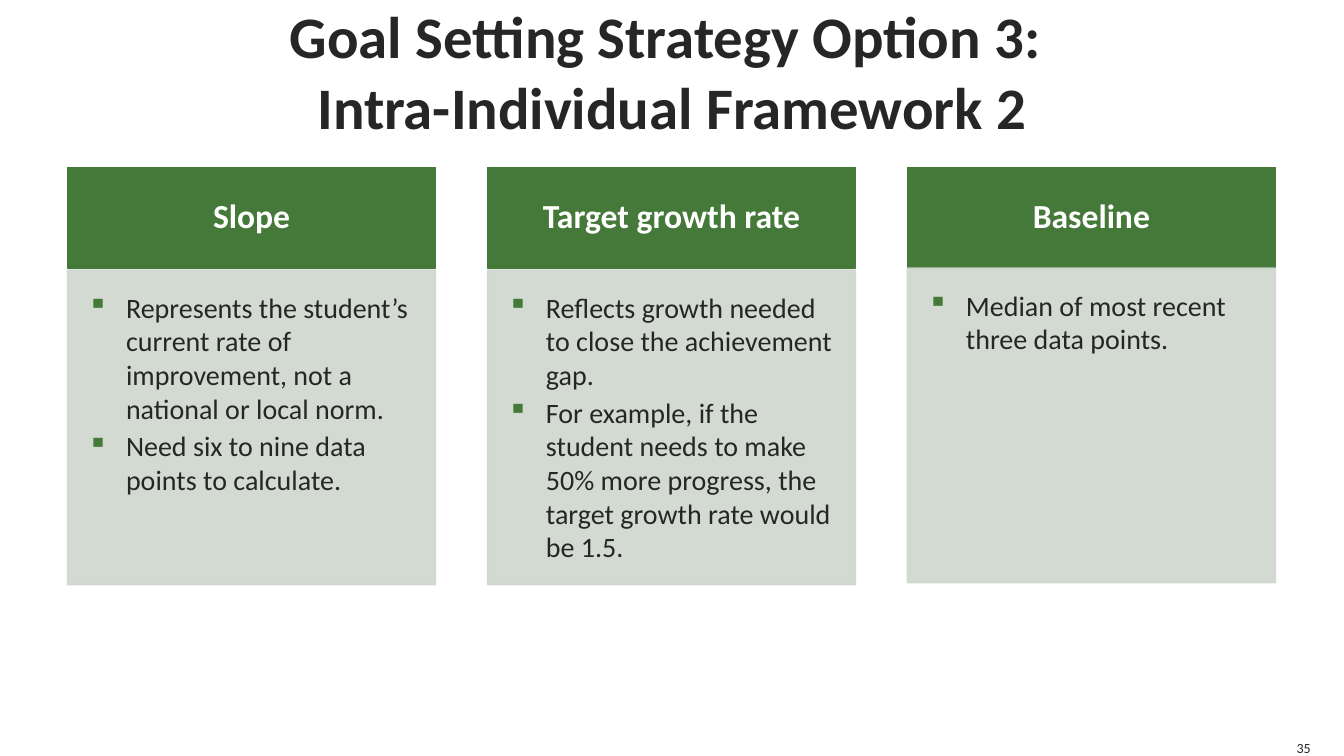
from lxml import etree
from pptx import Presentation
from pptx.dml.color import RGBColor
from pptx.enum import shapes, text
from pptx.oxml import ns
from pptx.util import Inches, Pt

GREEN, PALE, DARK, WHITE = "447939", "CFD7CE", "262626", "FFFFFF"
CENTER, LEFT, RIGHT = text.PP_ALIGN.CENTER, text.PP_ALIGN.LEFT, text.PP_ALIGN.RIGHT
TOP, MIDDLE, BOTTOM = text.MSO_ANCHOR.TOP, text.MSO_ANCHOR.MIDDLE, text.MSO_ANCHOR.BOTTOM


def add_block(place, paragraphs, size, color, fill=None, alpha=100, bold=False,
              align=CENTER, anchor=MIDDLE, insets=(0, 0, 0, 0), wrap=True,
              line_spacing=1.0, space_after=0, bullet=False):
    box = [Inches(value) for value in place]
    if fill:
        shape = slide.shapes.add_shape(shapes.MSO_SHAPE.RECTANGLE, *box)
        shape.shadow.inherit = False
        shape.line.width = Pt(1)
        for paint in (shape.fill, shape.line.fill):
            paint.solid()
            paint.fore_color.rgb = RGBColor.from_string(fill)
        if alpha < 100:
            for node in shape._element.spPr.iter(ns.qn("a:srgbClr")):
                etree.SubElement(node, ns.qn("a:alpha"), val=str(alpha * 1000))
    else:
        shape = slide.shapes.add_textbox(*box)

    frame = shape.text_frame
    frame.word_wrap = wrap
    frame.vertical_anchor = anchor
    for side, inset in zip(("left", "top", "right", "bottom"), insets):
        setattr(frame, f"margin_{side}", Inches(inset))

    for index, runs in enumerate(paragraphs):
        paragraph = frame.add_paragraph() if index else frame.paragraphs[0]
        paragraph_format = {"alignment": align, "line_spacing": line_spacing,
                            "space_after": Pt(space_after)}
        for name, value in paragraph_format.items():
            setattr(paragraph, name, value)
        if bullet:
            properties = paragraph._p.get_or_add_pPr()
            properties.set("marL", str(Inches(0.38)))
            properties.set("indent", str(-Inches(0.38)))
            bullet_color = etree.SubElement(properties, ns.qn("a:buClr"))
            etree.SubElement(bullet_color, ns.qn("a:srgbClr"), val=GREEN)
            etree.SubElement(properties, ns.qn("a:buChar"), char="▪")
        for number, words in enumerate(runs):
            if number:
                paragraph.add_line_break()
            run = paragraph.add_run()
            run.text = words
            run_format = {"name": "Calibri", "size": Pt(size), "bold": bold}
            for name, value in run_format.items():
                setattr(run.font, name, value)
            run.font.color.rgb = RGBColor.from_string(color)


presentation = Presentation()
presentation.slide_width = Inches(13.33)
presentation.slide_height = Inches(7.5)
slide = presentation.slides.add_slide(presentation.slide_layouts[6])

# Title
add_block((0.5, 0, 12.33, 1.4),
          [["Goal Setting Strategy Option 3: ", "Intra-Individual Framework 2"]],
          42, DARK, bold=True)

# Three columns: heading, top of the body, bullets
columns = [
    ("Slope", 2.68, [
        "Represents the student’s current rate of improvement, not a national or local norm.",
        "Need six to nine data points to calculate."]),
    ("Target growth rate", 2.68, [
        "Reflects growth needed to close the achievement gap.",
        "For example, if the student needs to make 50% more progress, "
        "the target growth rate would be 1.5."]),
    ("Baseline", 2.66, ["Median of most recent three data points."]),
]
for index, (heading, body_top, points) in enumerate(columns):
    left = 0.67 + index * 4.165
    add_block((left, 1.66, 3.65, 1), [[heading]], 24, WHITE, fill=GREEN, bold=True,
              insets=(0.19, 0.11, 0.19, 0.11), line_spacing=0.9)
    add_block((left, body_top, 3.65, 3.12), [[point] for point in points], 20, DARK,
              fill=PALE, alpha=90, align=LEFT, anchor=TOP,
              insets=(0.2, 0.2, 0.16, 0.17), space_after=3, bullet=True)

# Slide number
add_block((12.83, 7.33, 0.17, 0.17), [["35"]], 10, DARK,
          align=RIGHT, anchor=BOTTOM, wrap=False)

presentation.save("out.pptx")
